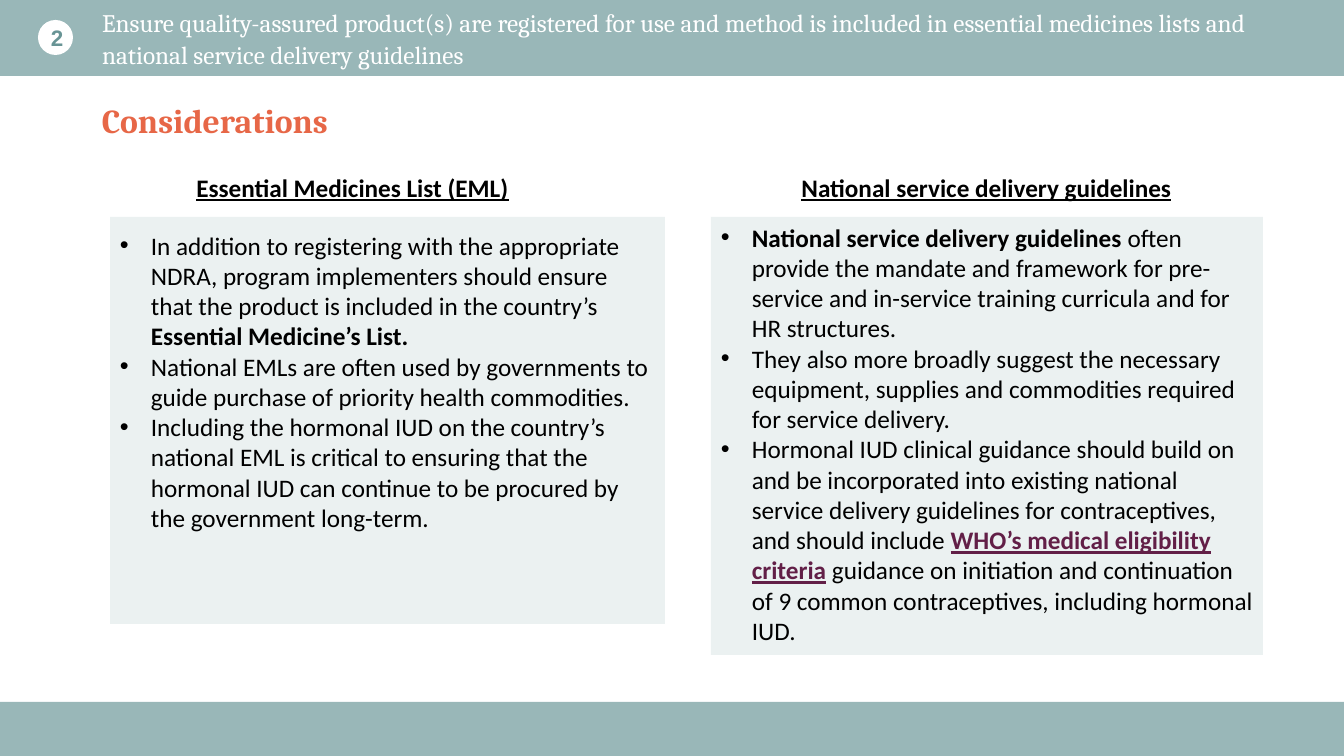
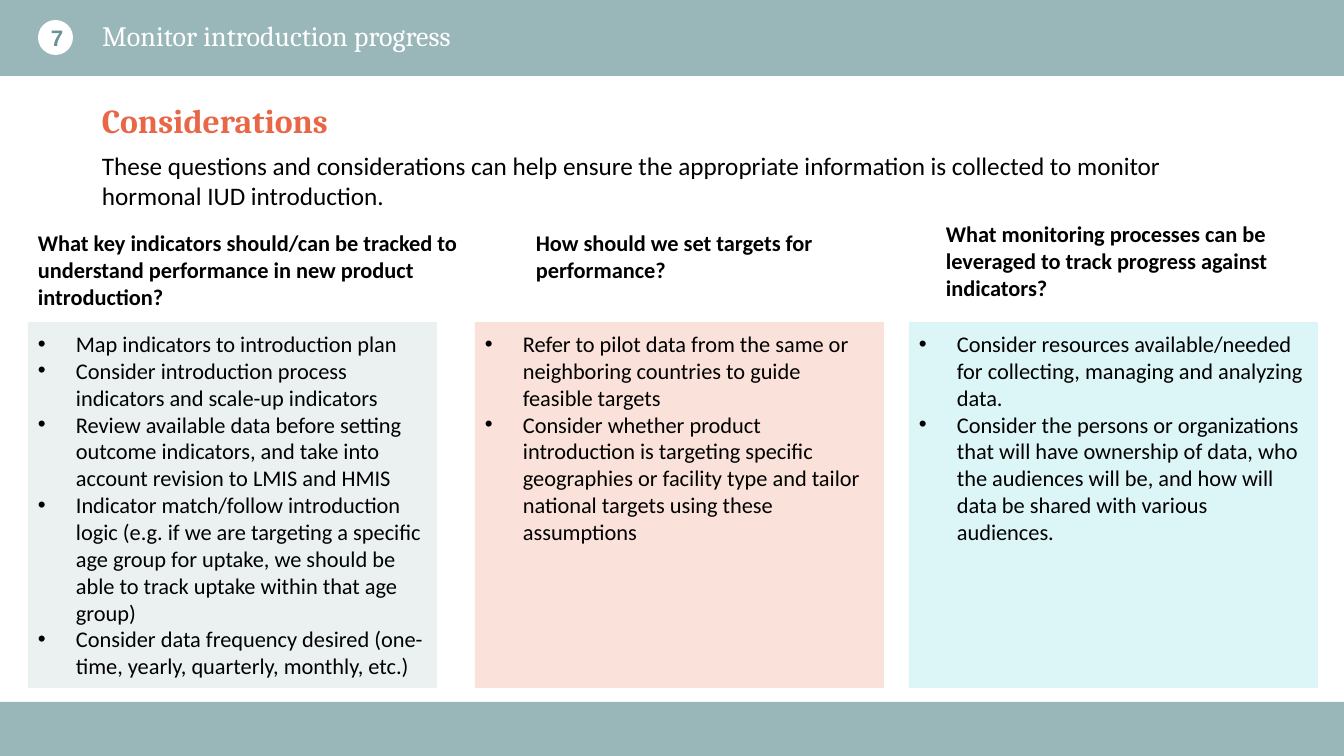
from lxml.etree import SubElement
from pptx import Presentation
from pptx.dml.color import RGBColor
from pptx.enum.shapes import MSO_SHAPE as SHAPE
from pptx.enum.text import MSO_ANCHOR as ANCHOR, MSO_AUTO_SIZE as AUTO, PP_ALIGN as ALIGN
from pptx.oxml.ns import qn
from pptx.util import Pt

SLIDE_W, SLIDE_H = 1344, 756
EMU_PER_PX = 12192000 / SLIDE_W
COLORS = {
    "band": "99B7B8", "white": "FFFFFF", "number": "689495", "accent": "E76747",
    "text": "000000", "link": "621F47",
    "grey": "EBF1F1", "peach": "FAE1DA", "aqua": "DCF5F7",
}
HEAD, BODY, DIGIT = "Cambria", "Calibri", "Arial"
BOLD = {"bold": True}
LINK = {"bold": True, "underline": True, "color": "link"}

# Boxes are (left, top, width, height) in px
BANDS = [(0, 0, SLIDE_W, 76), (0, 702, SLIDE_W, 54)]
BADGE = (38, 20, 35, 35)
TITLE = (92, 8, 1215, 59)
SUBTITLE = (92, 102, 418, 43)
INTRO = (92, 145, 1175, 72)

# A bullet is a list of runs: (text, style)
SLIDES = [
    {
        "number": "2",
        "title": "Ensure quality-assured product(s) are registered for use and method is included "
                 "in essential medicines lists and national service delivery guidelines",
        "title_size": 18, "title_spacing": 1.07,
        "size": 18, "indent": 31,
        "heading_style": {"bold": True, "underline": True}, "heading_align": ALIGN.CENTER,
        "columns": [
            {
                "heading": "Essential Medicines List (EML)", "heading_box": (173, 167, 359, 40),
                "panel": (110, 217, 555, 407), "fill": "grey", "inset": 13,
                "bullets": [
                    [("In addition to registering with the appropriate NDRA, program implementers "
                      "should ensure that the product is included in the country’s ", {}),
                     ("Essential Medicine’s List.", BOLD)],
                    [("National EMLs are often used by governments to guide purchase of priority "
                      "health commodities.", {})],
                    [("Including the hormonal IUD on the country’s national EML is critical to "
                      "ensuring that the hormonal IUD can continue to be procured by the "
                      "government long-term.", {})],
                ],
            },
            {
                "heading": "National service delivery guidelines",
                "heading_box": (779, 167, 415, 40),
                "panel": (711, 217, 552, 438), "fill": "grey", "inset": 5,
                "bullets": [
                    [("National service delivery guidelines ", BOLD),
                     ("often provide the mandate and framework for pre-service and in-service "
                      "training curricula and for HR structures.", {})],
                    [("They also more broadly suggest the necessary equipment, supplies and "
                      "commodities required for service delivery.", {})],
                    [("Hormonal IUD clinical guidance should build on and be incorporated into "
                      "existing national service delivery guidelines for contraceptives, and "
                      "should include ", {}),
                     ("WHO’s medical eligibility criteria", LINK),
                     (" guidance on initiation and continuation of 9 common contraceptives, "
                      "including hormonal IUD.", {})],
                ],
            },
        ],
    },
    {
        "number": "7",
        "title": "Monitor introduction progress", "title_size": 20, "title_spacing": 0.9,
        "intro": "These questions and considerations can help ensure the appropriate information "
                 "is collected to monitor hormonal IUD introduction.",
        "size": 16, "indent": 38,
        "heading_style": BOLD, "heading_align": ALIGN.LEFT,
        "columns": [
            {
                "heading": "What key indicators should/can be tracked to understand performance "
                           "in new product introduction?",
                "heading_box": (28, 224, 453, 92),
                "panel": (28, 322, 409, 366), "fill": "grey", "inset": 8,
                "bullets": [
                    [("Map indicators to introduction plan", {})],
                    [("Consider introduction process indicators and scale-up indicators", {})],
                    [("Review available data before setting outcome indicators, and take into "
                      "account revision to LMIS and HMIS", {})],
                    [("Indicator match/follow introduction logic (e.g. if we are targeting a "
                      "specific age group for uptake, we should be able to track uptake within "
                      "that age group)", {})],
                    [("Consider data frequency desired (one-time, yearly, quarterly, monthly, "
                      "etc.)", {})],
                ],
            },
            {
                "heading": "How should we set targets for performance?",
                "heading_box": (526, 224, 305, 65),
                "panel": (475, 322, 409, 366), "fill": "peach", "inset": 8,
                "bullets": [
                    [("Refer to pilot data from the same or neighboring countries to guide "
                      "feasible targets", {})],
                    [("Consider whether product introduction is targeting specific geographies "
                      "or facility type and tailor national targets using these assumptions", {})],
                ],
            },
            {
                "heading": "What monitoring processes can be leveraged to track progress against "
                           "indicators?",
                "heading_box": (936, 215, 400, 92),
                "panel": (909, 322, 409, 366), "fill": "aqua", "inset": 8,
                "bullets": [
                    [("Consider resources available/needed for collecting, managing and analyzing "
                      "data.", {})],
                    [("Consider the persons or organizations that will have ownership of data, "
                      "who the audiences will be, and how will data be shared with various "
                      "audiences.", {})],
                ],
            },
        ],
    },
]


def px(n):
    return round(n * EMU_PER_PX)


def place(box):
    return [px(n) for n in box]


def rgb(name):
    return RGBColor.from_string(COLORS[name])


def style_run(r, size, font=BODY, color="text", bold=False, underline=False):
    r.font.size, r.font.name = Pt(size), font
    r.font.bold, r.font.underline = bold, underline
    r.font.color.rgb = rgb(color)


def set_text(sp, text, align=ALIGN.LEFT, anchor=ANCHOR.TOP, spacing=1.0, **style):
    """Fill a shape with one paragraph in one style."""
    tf = sp.text_frame
    tf.text = text
    tf.word_wrap, tf.auto_size, tf.vertical_anchor = True, AUTO.NONE, anchor
    p = tf.paragraphs[0]
    p.alignment, p.line_spacing = align, spacing
    style_run(p.runs[0], **style)


def add_text(s, box, text, **options):
    set_text(s.shapes.add_textbox(*place(box)), text, **options)


def add_block(s, kind, box, fill):
    sp = s.shapes.add_shape(kind, *place(box))
    sp.shadow.inherit = False
    sp.fill.solid()
    sp.fill.fore_color.rgb = rgb(fill)
    sp.line.fill.background()
    return sp


def add_bullet(p, indent):
    pPr = p._p.get_or_add_pPr()
    pPr.set("marL", str(px(indent)))
    pPr.set("indent", str(-px(indent)))
    SubElement(pPr, qn("a:buFont")).set("typeface", "Arial")
    SubElement(pPr, qn("a:buChar")).set("char", "•")


def add_panel(s, column, size, indent):
    sp = add_block(s, SHAPE.RECTANGLE, column["panel"], column["fill"])
    tf = sp.text_frame
    tf.word_wrap, tf.vertical_anchor = True, ANCHOR.TOP
    tf.margin_top = px(column["inset"])
    for i, runs in enumerate(column["bullets"]):
        p = tf.add_paragraph() if i else tf.paragraphs[0]
        p.alignment = ALIGN.LEFT
        add_bullet(p, indent)
        for text, style in runs:
            r = p.add_run()
            r.text = text
            style_run(r, size, **style)


def add_badge(s, number):
    sp = add_block(s, SHAPE.OVAL, BADGE, "white")
    tf = sp.text_frame
    tf.margin_left = px(3)
    tf.margin_right = tf.margin_top = tf.margin_bottom = 0
    set_text(sp, number, align=ALIGN.CENTER, anchor=ANCHOR.MIDDLE,
             size=16, font=DIGIT, color="number", bold=True)


def move_bands_to_layout(s, layout):
    """Draw the bands on a slide, then hand them to its layout for all slides."""
    for box in BANDS:
        band = add_block(s, SHAPE.RECTANGLE, box, "band")
        layout.shapes.element.insert(2, band.element)


def build_slide(s, content):
    title = s.shapes.title
    title.left, title.top, title.width, title.height = place(TITLE)
    set_text(title, content["title"], anchor=ANCHOR.MIDDLE, spacing=content["title_spacing"],
             size=content["title_size"], font=HEAD, color="white")
    add_badge(s, content["number"])
    add_text(s, SUBTITLE, "Considerations", anchor=ANCHOR.MIDDLE, spacing=0.8,
             size=24, font=HEAD, color="accent", bold=True)
    if "intro" in content:
        add_text(s, INTRO, content["intro"], size=18)
    for column in content["columns"]:
        add_text(s, column["heading_box"], column["heading"], align=content["heading_align"],
                 size=content["size"], **content["heading_style"])
        add_panel(s, column, content["size"], content["indent"])


def main():
    prs = Presentation()
    prs.slide_width, prs.slide_height = px(SLIDE_W), px(SLIDE_H)
    layout = prs.slide_layouts[5]
    for i, content in enumerate(SLIDES):
        s = prs.slides.add_slide(layout)
        if i == 0:
            move_bands_to_layout(s, layout)
        build_slide(s, content)
    prs.save("out.pptx")


if __name__ == "__main__":
    main()
